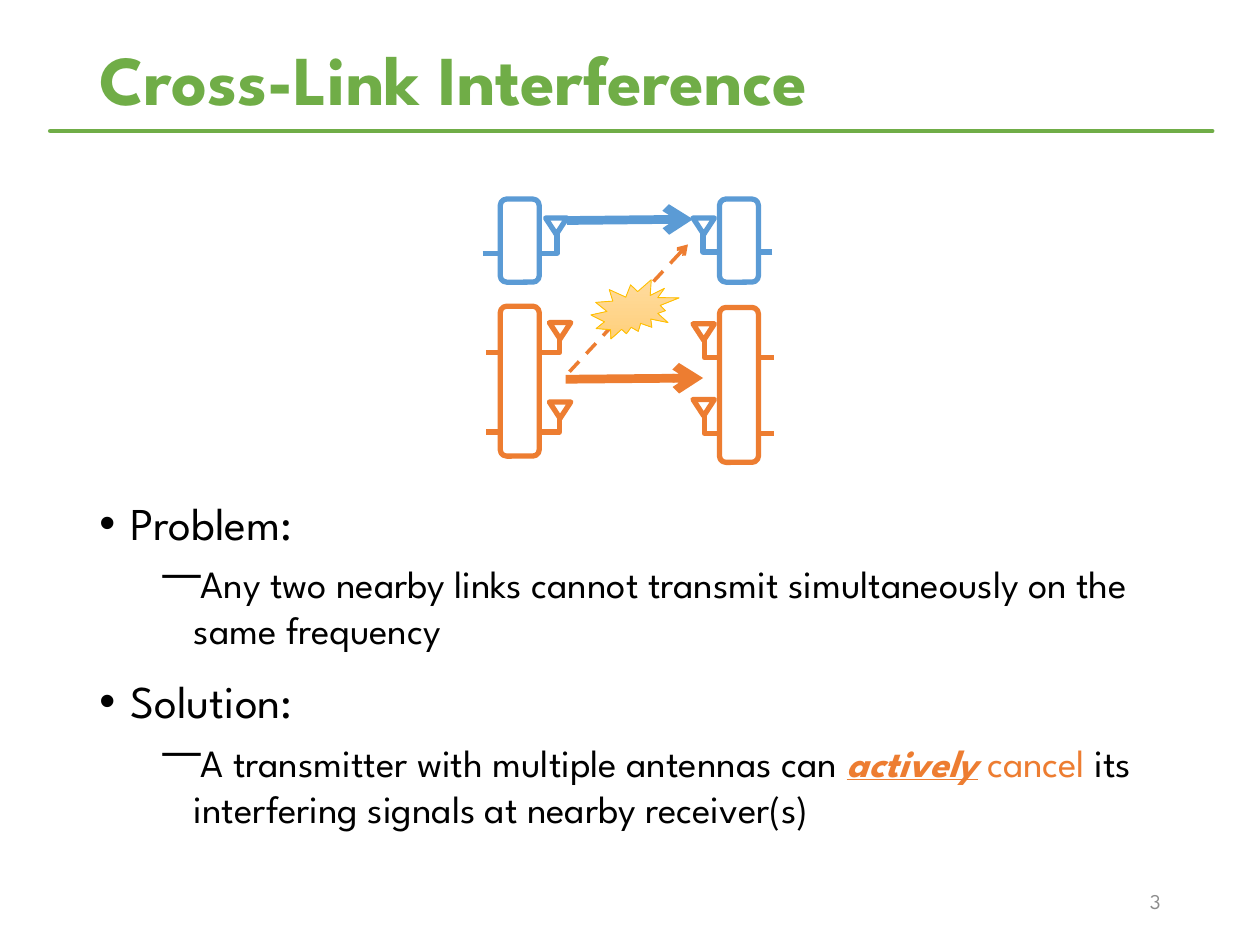
from dataclasses import dataclass

from lxml.etree import SubElement
from pptx import Presentation
from pptx.dml.color import RGBColor
from pptx.enum.dml import MSO_LINE as Dash
from pptx.enum.shapes import MSO_CONNECTOR as Link, MSO_SHAPE as Form
from pptx.enum.text import MSO_ANCHOR as Anchor, PP_ALIGN as Align
from pptx.oxml.ns import qn
from pptx.util import Inches, Pt


@dataclass(frozen=True)
class Theme:
    font: str = "League Spartan"
    green: str = "70AD47"
    blue: str = "5B9BD5"
    orange: str = "ED7D31"
    gold: str = "FFC000"
    glow: tuple = ("FFDB9E", "FFD07C")
    black: str = "000000"
    white: str = "FFFFFF"
    gray: str = "8C8C8C"
    title: int = 40
    head: int = 26
    body: int = 22
    small: int = 12


T = Theme()
rgb = RGBColor.from_string


def add_box(shapes, area, anchor=Anchor.TOP):
    frame = shapes.add_textbox(*map(Inches, area)).text_frame
    frame.word_wrap = True
    frame.vertical_anchor = anchor
    return frame


def add_run(para, text, size, color=T.black, **style):
    run = para.add_run()
    run.text = text
    font = run.font
    font.color.rgb = rgb(color)
    for name, value in {"name": T.font, "size": Pt(size), **style}.items():
        setattr(font, name, value)


def set_bullet(para, mark, left):
    props = para._p.get_or_add_pPr()
    props.set("marL", str(Inches(left)))
    props.set("indent", str(Inches(-0.25)))
    SubElement(props, qn("a:buFont"), typeface="Arial")
    SubElement(props, qn("a:buChar"), char=mark)


def add_points(shapes, area, points):
    frame = add_box(shapes, area)
    for i, (level, runs) in enumerate(points):
        para = frame.paragraphs[0] if i == 0 else frame.add_paragraph()
        para.level = level
        para.space_before = Pt(6 if level else 12)
        set_bullet(para, "⎻" if level else "•", 0.75 if level else 0.25)
        for text, style in runs:
            add_run(para, text, T.body if level else T.head, **style)


def add_line(shapes, start, end, color, width, kind=Link.STRAIGHT,
             dash=None, arrow=False):
    line = shapes.add_connector(kind, *map(Inches, (*start, *end)))
    line.line.color.rgb = rgb(color)
    line.line.width = Pt(width)
    if dash:
        line.line.dash_style = dash
    if arrow:
        SubElement(line.line._get_or_add_ln(), qn("a:tailEnd"), type="arrow")
    SubElement(line._element.spPr, qn("a:effectLst"))
    return line


def add_form(shapes, form, area, color, width=3):
    shape = shapes.add_shape(form, *map(Inches, area))
    shape.shadow.inherit = False
    shape.fill.solid()
    shape.fill.fore_color.rgb = rgb(T.white)
    shape.line.color.rgb = rgb(color)
    shape.line.width = Pt(width)
    return shape


def add_mast(shapes, start, end, tip, color):
    """Antenna: a one-corner wire from the radio up to a triangle at tip."""
    wire = add_line(shapes, start, end, color, 3, Link.ELBOW)
    wire._element.spPr.find(qn("a:prstGeom")).set("prst", "bentConnector2")
    add_form(shapes, Form.ISOSCELES_TRIANGLE, (*tip, 0.17, 0.13),
             color).rotation = 180


def add_radios(shapes, masts, boxes, color):
    for start, end, tip in masts:
        add_mast(shapes, start, end, tip, color)
    for left, top, high in boxes:
        add_form(shapes, Form.ROUNDED_RECTANGLE, (left, top, 0.31, high), color)


def add_burst(shapes, area):
    burst = add_form(shapes, Form.EXPLOSION2, area, T.gold, 0.5)
    burst.fill.gradient()
    burst.fill.gradient_angle = 270
    for stop, color in zip(burst.fill.gradient_stops, T.glow):
        stop.color.rgb = rgb(color)


def add_links(shapes):
    pair = shapes.add_group_shape().shapes
    left = [((3.86, y), (4.44, y - 0.12), (4.36, y - 0.24))
            for y in (2.8, 3.43)]
    right = [((6.14, y), (5.59, y - 0.14), (5.5, y - 0.27))
             for y in (2.84, 3.44)]
    add_radios(pair, left + right, [(5.71, 2.44, 1.23), (3.97, 2.43, 1.19)],
               T.orange)

    single = shapes.add_group_shape().shapes
    masts = [((3.83, 2.01), (4.42, 1.86), (4.33, 1.73)),
             ((6.13, 2), (5.58, 1.86), (5.5, 1.73))]
    add_radios(single, masts, [(3.97, 1.58, 0.66), (5.71, 1.58, 0.66)], T.blue)
    add_line(single, (4.5, 1.75), (5.5, 1.74), T.blue, 5, arrow=True)

    add_line(shapes, (4.49, 3.01), (5.58, 3), T.orange, 5, arrow=True)
    add_line(shapes, (4.52, 2.95), (5.46, 1.94), T.orange, 2,
             dash=Dash.DASH, arrow=True)
    add_burst(shapes, (4.69, 2.22, 0.7, 0.47))


def main():
    deck = Presentation()
    deck.slide_width, deck.slide_height = Inches(10), Inches(7.5)
    shapes = deck.slides.add_slide(deck.slide_layouts[6]).shapes

    rule = add_line(shapes, (0.4, 1.04), (9.62, 1.04), T.green, 2.75)
    rule.line._get_or_add_ln().set("cap", "rnd")
    title = add_box(shapes, (0.69, 0.29, 8.62, 0.74), Anchor.MIDDLE)
    title.paragraphs[0].line_spacing = 0.9
    add_run(title.paragraphs[0], "Cross-Link Interference", T.title, T.green,
            bold=True)

    accent = {"color": T.orange}
    strong = {**accent, "bold": True, "italic": True, "underline": True}
    add_points(shapes, (0.69, 3.88, 8.62, 3.29), [
        (0, [("Problem:", {})]),
        (1, [("Any two nearby links cannot transmit simultaneously "
              "on the same frequency", {})]),
        (0, [("Solution:", {})]),
        (1, [("A transmitter with multiple antennas can ", {}),
             ("actively", strong), (" ", {}), ("cancel", accent),
             (" its interfering signals at nearby receiver(s)", {})]),
    ])

    page = add_box(shapes, (7.06, 6.95, 2.25, 0.4), Anchor.MIDDLE)
    page.paragraphs[0].alignment = Align.RIGHT
    add_run(page.paragraphs[0], "3", T.small, T.gray)

    add_links(shapes)
    deck.save("out.pptx")


if __name__ == "__main__":
    main()
